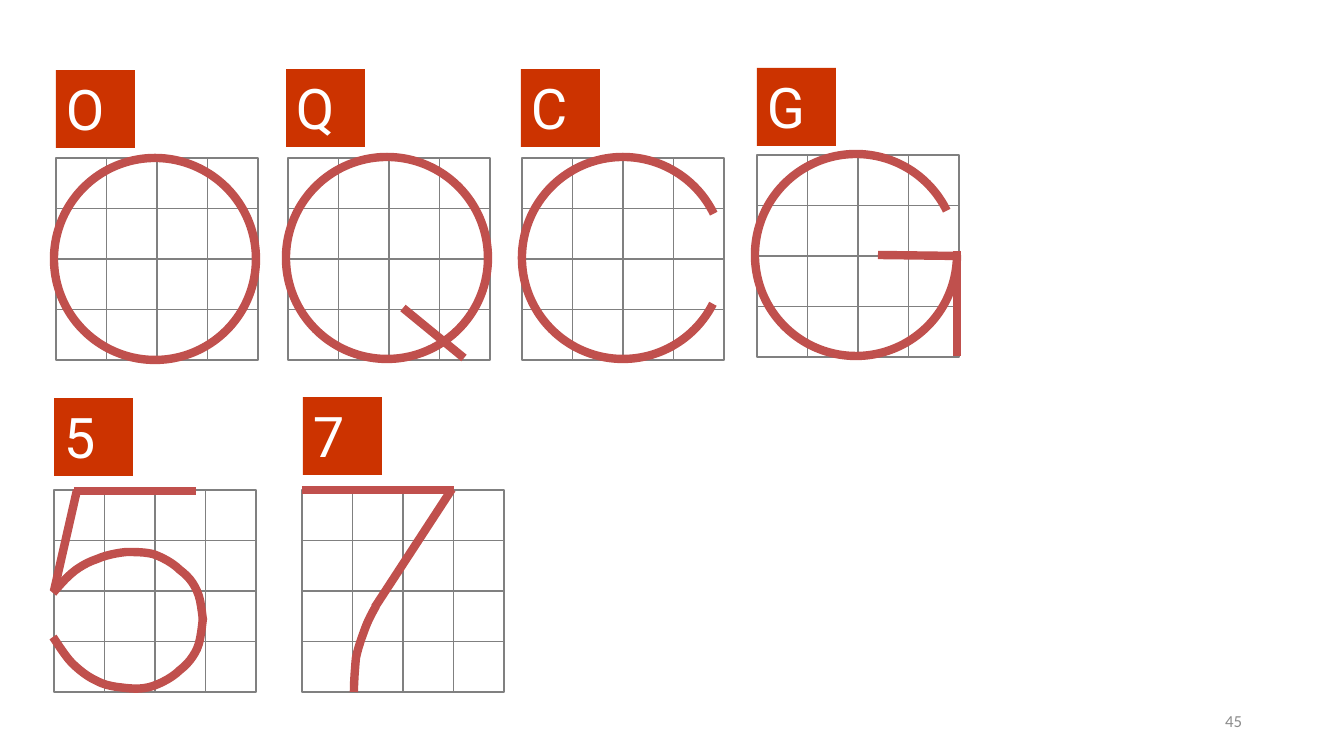
from lxml.etree import SubElement
from pptx import Presentation
from pptx.dml.color import RGBColor
from pptx.enum.shapes import MSO_CONNECTOR, MSO_SHAPE
from pptx.enum.text import MSO_ANCHOR, PP_ALIGN
from pptx.oxml.ns import qn
from pptx.util import Pt

SCALE = 914400 / 100.8
RED, GREY, WHITE, INK = "CC3300", "808080", "FFFFFF", "C0504D"
SIDE, CELLS = 202, 4
LABEL_SIZE = (79, 78)
RADIUS = 101

GLYPHS = [
    {"text": "O", "label": (56, 70), "grid": (56, 158), "circle": (155, 259)},
    {"text": "Q", "label": (286, 69), "grid": (288, 158), "circle": (387, 258),
     "strokes": [((403, 308), (464, 358), None, None)]},
    {"text": "C", "label": (521, 69), "grid": (522, 158), "circle": (623, 258),
     "angles": (27, 334)},
    {"text": "G", "label": (757, 68), "grid": (757, 155), "circle": (856, 255),
     "angles": (0, 334),
     "strokes": [((878, 255), (959, 255), None, 3),
                 ((957, 251), (957, 356), None, None)]},
    {"text": "5", "label": (54, 398), "grid": (54, 490),
     "strokes": [((74, 491), (196, 491), None, None),
                 ((77, 490), (54, 591), None, 1)],
     "curves": [
         [(53, 593), (59, 586), (65, 579), (72, 573), (79, 567), (88, 562),
          (97, 559), (106, 555), (117, 553), (126, 552), (136, 552),
          (144, 552), (153, 554), (162, 557), (173, 563), (180, 570),
          (188, 576), (193, 582), (197, 591), (201, 599), (202, 614),
          (203, 620)],
         [(53, 637), (56, 641), (65, 656), (72, 663), (79, 670), (88, 677),
          (97, 681), (106, 686), (117, 687), (126, 688), (136, 689),
          (144, 689), (153, 686), (162, 683), (173, 677), (180, 670),
          (188, 664), (193, 657), (197, 649), (201, 640), (202, 625),
          (203, 618)]]},
    {"text": "7", "label": (303, 397), "grid": (302, 490),
     "strokes": [((302, 490), (454, 490), None, None),
                 ((452, 489), (375, 607), None, None)],
     "curves": [
         [(376, 606), (374, 610), (368, 620), (365, 629), (362, 637),
          (358, 648), (356, 658), (355, 669), (354, 682), (354, 692)]]},
]
PAGE_NUMBER = {"text": "45", "at": (950, 701, 302, 40)}


def px(*lengths):
    return [round(length * SCALE) for length in lengths]


def color(value):
    return RGBColor.from_string(value)


def assign(target, values):
    for name, value in values.items():
        setattr(target, name, value)


def set_line(item, line_color, points):
    item.line.color.rgb = color(line_color)
    item.line.width = Pt(points)


def outline(shape, line_color, points):
    shape.shadow.inherit = False
    shape.fill.background()
    set_line(shape, line_color, points)


def add_line(shapes, start, end, line_color, points, begin=None, finish=None):
    line = shapes.add_connector(MSO_CONNECTOR.STRAIGHT, *px(*start, *end))
    set_line(line, line_color, points)
    SubElement(line._element.spPr, qn("a:effectLst"))
    if begin:
        line.begin_connect(*begin)
    if finish:
        line.end_connect(*finish)


def add_text(page, at, text, font, frame_format, align):
    box = page.shapes.add_textbox(*px(*at))
    assign(box.text_frame, {"word_wrap": True, **frame_format})
    para = box.text_frame.paragraphs[0]
    para.alignment = align
    span = para.add_run()
    span.text = text
    name, size, font_color = font
    assign(span.font, {"name": name, "size": Pt(size)})
    span.font.color.rgb = color(font_color)
    return box


def add_grid(page, left, top):
    group = page.shapes.add_group_shape()
    frame = group.shapes.add_shape(MSO_SHAPE.RECTANGLE, *px(left, top, SIDE, SIDE))
    outline(frame, GREY, 1)
    for step in range(1, CELLS):
        offset = SIDE * step / CELLS
        middle = step * 2 == CELLS
        x, y = left + offset, top + offset
        for start, end, sides in (((x, top), (x, top + SIDE), (0, 2)),
                                  ((left, y), (left + SIDE, y), (1, 3))):
            joints = [(frame, side) if middle else None for side in sides]
            add_line(group.shapes, start, end, GREY, 1, *joints)
    return frame


def add_circle(page, center, angles):
    x, y = center
    kind = MSO_SHAPE.ARC if angles else MSO_SHAPE.OVAL
    circle = page.shapes.add_shape(
        kind, *px(x - RADIUS, y - RADIUS, 2 * RADIUS, 2 * RADIUS))
    for index, angle in enumerate(angles):
        circle.adjustments[index] = angle * 0.6
    outline(circle, INK, 6)


def bezier(knots, steps=6):
    points = [knots[0]]
    for first in range(0, len(knots) - 1, 3):
        a, b, c, d = knots[first:first + 4]
        for step in range(1, steps + 1):
            t = step / steps
            u = 1 - t
            weights = (u ** 3, 3 * u * u * t, 3 * u * t * t, t ** 3)
            points.append(tuple(
                sum(w * knot[axis] for w, knot in zip(weights, (a, b, c, d)))
                for axis in (0, 1)))
    return points


def add_curve(page, knots):
    points = [px(*point) for point in bezier(knots)]
    builder = page.shapes.build_freeform(*points[0], scale=1.0)
    builder.add_line_segments(points[1:], close=False)
    outline(builder.convert_to_shape(), INK, 6)


def add_glyph(page, glyph):
    label = add_text(page, (*glyph["label"], *LABEL_SIZE), glyph["text"],
                     ("Roboto", 40, WHITE), {}, PP_ALIGN.LEFT)
    label.fill.solid()
    label.fill.fore_color.rgb = color(RED)
    frame = add_grid(page, *glyph["grid"])
    if "circle" in glyph:
        add_circle(page, glyph["circle"], glyph.get("angles", ()))
    for start, end, *sides in glyph.get("strokes", []):
        joints = [None if side is None else (frame, side) for side in sides]
        add_line(page.shapes, start, end, INK, 6, *joints)
    for knots in glyph.get("curves", []):
        add_curve(page, knots)


def main():
    deck = Presentation()
    width, height = px(1344, 756)
    assign(deck, {"slide_width": width, "slide_height": height})
    page = deck.slides.add_slide(deck.slide_layouts[6])
    for glyph in GLYPHS:
        add_glyph(page, glyph)
    add_text(page, PAGE_NUMBER["at"], PAGE_NUMBER["text"], ("Calibri", 12, "8C8C8C"),
             {"vertical_anchor": MSO_ANCHOR.MIDDLE}, PP_ALIGN.RIGHT)
    deck.save("out.pptx")


if __name__ == "__main__":
    main()
